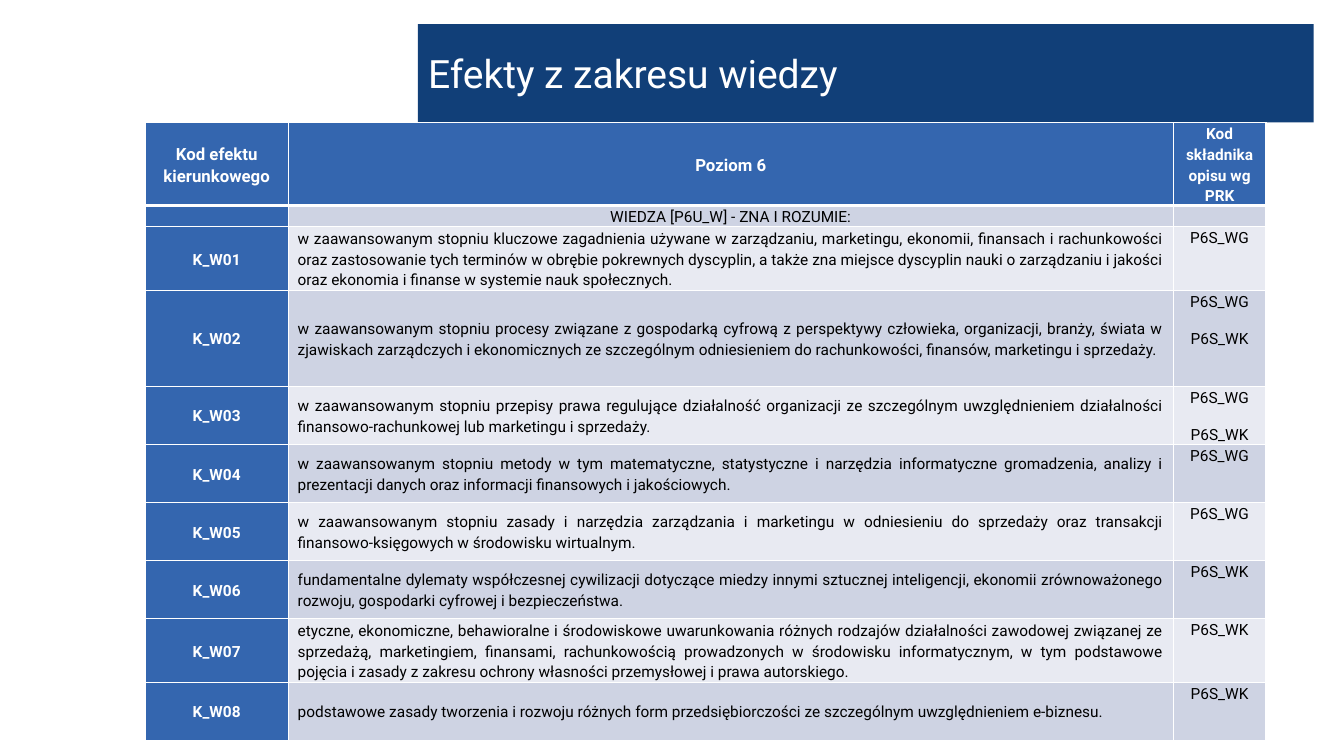
from lxml.etree import SubElement
from pptx import Presentation
from pptx.dml.color import RGBColor
from pptx.enum.text import MSO_ANCHOR, MSO_AUTO_SIZE, PP_ALIGN
from pptx.oxml.ns import qn
from pptx.util import Inches, Pt

NAVY = RGBColor(0x11, 0x3F, 0x78)
BLUE = RGBColor(0x34, 0x66, 0xAF)
BAND = RGBColor(0xCE, 0xD3, 0xE3)
PALE = RGBColor(0xE8, 0xEA, 0xF2)
WHITE = RGBColor(0xFF, 0xFF, 0xFF)
BLACK = RGBColor(0, 0, 0)

WIDTHS = [10.65, 65.85, 6.9]
HEIGHTS = [10.9, 2.8, 8.43, 12.7] + [7.68] * 4 + [8.43, 7.68]

HEAD = ["Kod efektu kierunkowego", "Poziom 6", "Kod składnika opisu wg PRK"]
GROUP = "WIEDZA [P6U_W] - ZNA I ROZUMIE:"
EFFECTS = [
    ("w zaawansowanym stopniu kluczowe zagadnienia używane w zarządzaniu, marketingu, "
     "ekonomii, finansach i rachunkowości oraz zastosowanie tych terminów w obrębie "
     "pokrewnych dyscyplin, a także zna miejsce dyscyplin nauki o zarządzaniu i jakości "
     "oraz ekonomia i finanse w systemie nauk społecznych.", "P6S_WG"),
    ("w zaawansowanym stopniu procesy związane z gospodarką cyfrową z perspektywy "
     "człowieka, organizacji, branży, świata w zjawiskach zarządczych i ekonomicznych ze "
     "szczególnym odniesieniem do rachunkowości, finansów, marketingu i sprzedaży.",
     "P6S_WG\nP6S_WK"),
    ("w zaawansowanym stopniu przepisy prawa regulujące działalność organizacji ze "
     "szczególnym uwzględnieniem działalności finansowo-rachunkowej lub marketingu i "
     "sprzedaży.", "P6S_WG\nP6S_WK"),
    ("w zaawansowanym stopniu metody w tym matematyczne, statystyczne i narzędzia "
     "informatyczne gromadzenia, analizy i prezentacji danych oraz informacji "
     "finansowych i jakościowych.", "P6S_WG"),
    ("w zaawansowanym stopniu zasady i narzędzia zarządzania i marketingu w odniesieniu "
     "do sprzedaży oraz transakcji finansowo-księgowych w środowisku wirtualnym.",
     "P6S_WG"),
    ("fundamentalne dylematy współczesnej cywilizacji dotyczące miedzy innymi sztucznej "
     "inteligencji, ekonomii zrównoważonego rozwoju, gospodarki cyfrowej i "
     "bezpieczeństwa.", "P6S_WK"),
    ("etyczne, ekonomiczne, behawioralne i środowiskowe uwarunkowania różnych rodzajów "
     "działalności zawodowej związanej ze sprzedażą, marketingiem, finansami, "
     "rachunkowością prowadzonych w środowisku informatycznym, w tym podstawowe pojęcia "
     "i zasady z zakresu ochrony własności przemysłowej i prawa autorskiego.", "P6S_WK"),
    ("podstawowe zasady tworzenia i rozwoju różnych form przedsiębiorczości ze "
     "szczególnym uwzględnieniem e-biznesu.", "P6S_WK"),
]


def write(frame, text, size=11, color=BLACK, bold=False, align=PP_ALIGN.CENTER,
          lead=1.15, gap=12):
    """Fill a text frame, one paragraph a line; gap is the space between them."""
    frame.text = text
    for i, para in enumerate(frame.paragraphs):
        para.alignment = align
        para.line_spacing = lead
        para.space_before = Pt(gap if i else 0)
        para.space_after = Pt(0)
        for run in para.runs:
            font = run.font
            font.name, font.size, font.bold = "Roboto", Pt(size), bold
            font.color.rgb = color
        if not para.runs:
            SubElement(para._p, qn("a:endParaRPr"), sz=str(size * 100))


def edge(cell, **widths):
    """Draw white borders; widths are in points, keyed L, R, T and B."""
    props = cell._tc.get_or_add_tcPr()
    for i, (side, width) in enumerate(widths.items()):
        line = SubElement(props, qn(f"a:ln{side}"), w=str(Pt(width)))
        fill = SubElement(line, qn("a:solidFill"))
        SubElement(fill, qn("a:srgbClr"), val=str(WHITE))
        props.insert(i, line)


class Deck:
    """Holds the slide; lengths are given in percent of its width or height."""

    def __init__(self):
        self.prs = Presentation()
        self.prs.slide_width, self.prs.slide_height = Inches(13.33), Inches(7.5)
        self.slide = self.prs.slides.add_slide(self.prs.slide_layouts[5])

    def wide(self, share):
        return int(self.prs.slide_width * share / 100)

    def high(self, share):
        return int(self.prs.slide_height * share / 100)

    def title(self, text, x, y, w, h):
        shape = self.slide.shapes.title
        shape.left, shape.top = self.wide(x), self.high(y)
        shape.width, shape.height = self.wide(w), self.high(h)
        shape.fill.solid()
        shape.fill.fore_color.rgb = NAVY
        frame = shape.text_frame
        frame.auto_size = MSO_AUTO_SIZE.NONE
        frame.vertical_anchor = MSO_ANCHOR.MIDDLE
        write(frame, text, size=27.9, color=WHITE, align=PP_ALIGN.LEFT, lead=1)

    def table(self, rows, x, y):
        table = self.slide.shapes.add_table(
            len(rows), len(WIDTHS), self.wide(x), self.high(y),
            self.wide(sum(WIDTHS)), self.high(sum(HEIGHTS))).table
        for col, share in zip(table.columns, WIDTHS):
            col.width = self.wide(share)
        for row, share in zip(table.rows, HEIGHTS):
            row.height = self.high(share)
        for r, row in enumerate(rows):
            for c, text in enumerate(row):
                self.cell(table.cell(r, c), text, r, c)

    def cell(self, cell, text, r, c):
        dark = r == 0 or c == 0
        cell.fill.solid()
        cell.fill.fore_color.rgb = BLUE if dark else BAND if r % 2 else PALE
        edge(cell, L=1, R=1, T=3 if r == 1 else 1, B=1 if r else 3)
        cell.margin_left = cell.margin_right = self.wide((0.1, 0.7, 0.3)[c])
        cell.margin_top = cell.margin_bottom = 0
        code = r > 1 and c == 2
        cell.vertical_anchor = MSO_ANCHOR.TOP if code else MSO_ANCHOR.MIDDLE
        write(cell.text_frame, text, size=12 if r == 0 and c < 2 else 11,
              color=WHITE if dark else BLACK, bold=dark,
              align=PP_ALIGN.JUSTIFY if r > 1 and c == 1 else PP_ALIGN.CENTER)


def main():
    deck = Deck()
    deck.title("Efekty z zakresu wiedzy", 31.1, 3.2, 66.65, 13)
    rows = [HEAD, ["", GROUP, ""]]
    rows += [[f"K_W{n:02}", text, code] for n, (text, code) in enumerate(EFFECTS, 1)]
    deck.table(rows, 10.8, 16.25)
    deck.prs.save("out.pptx")


if __name__ == "__main__":
    main()
